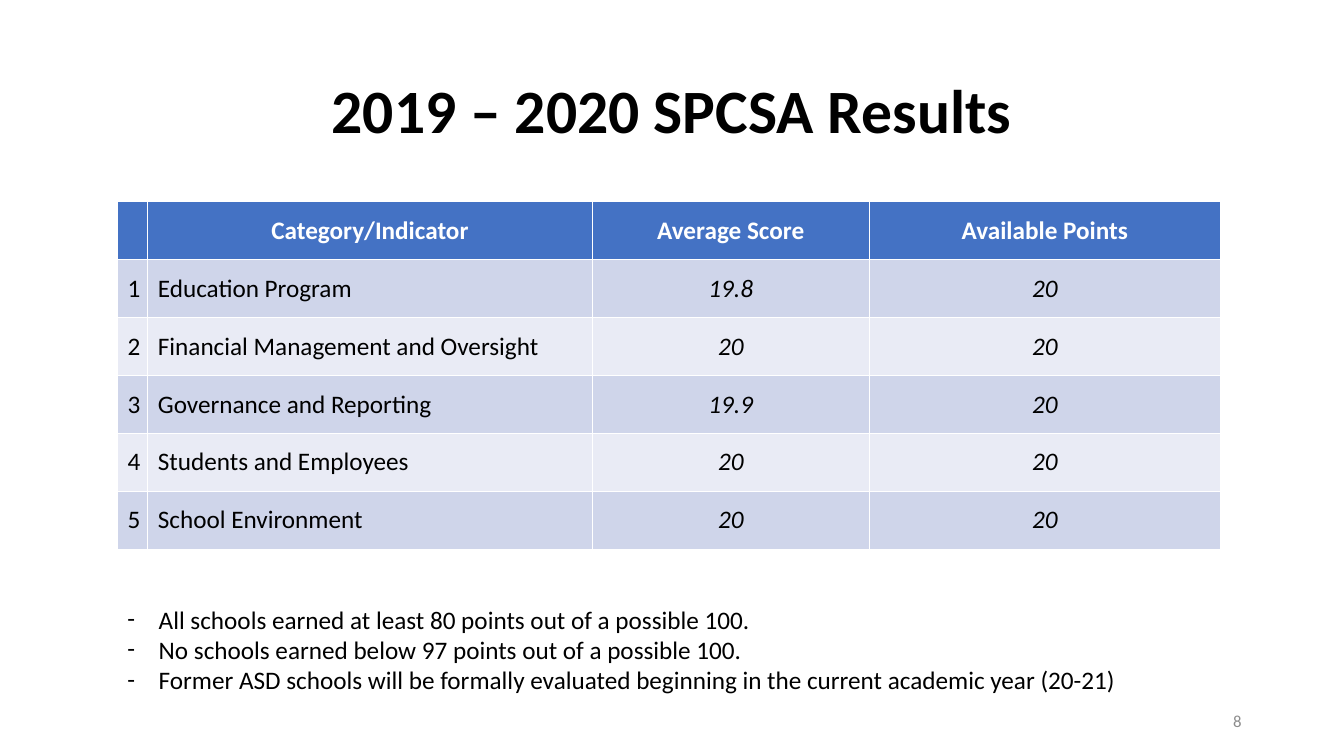
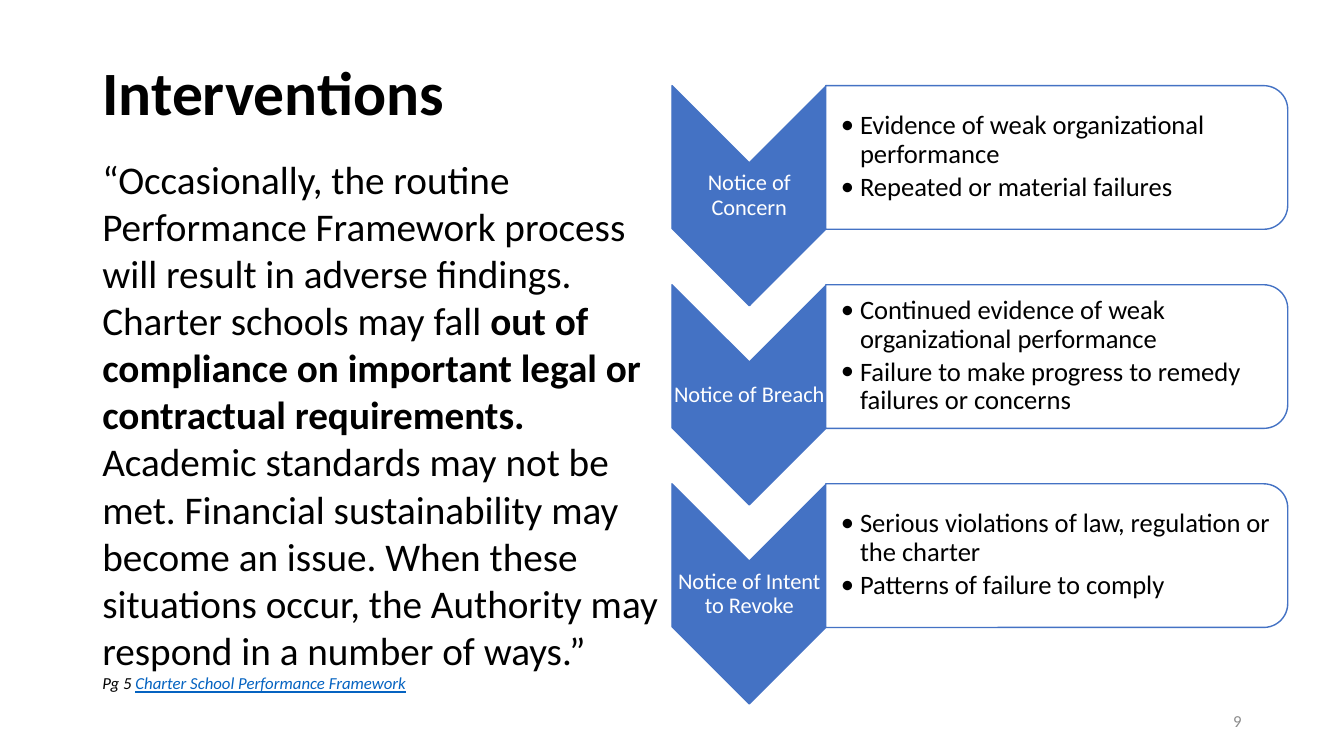
from lxml.etree import SubElement
from pptx import Presentation
from pptx.dml.color import RGBColor
from pptx.enum.shapes import MSO_SHAPE as Preset
from pptx.enum.text import MSO_ANCHOR as Anchor, PP_ALIGN as Align
from pptx.oxml.ns import qn
from pptx.util import Emu, Inches, Pt

BLACK = RGBColor(0x00, 0x00, 0x00)
WHITE = RGBColor(0xFF, 0xFF, 0xFF)
BLUE = RGBColor(0x44, 0x72, 0xC4)
BAND_DARK = RGBColor(0xCF, 0xD5, 0xEA)
BAND_LIGHT = RGBColor(0xE9, 0xEB, 0xF5)
GRAY = RGBColor(0x8C, 0x8C, 0x8C)
LINK_BLUE = RGBColor(0x05, 0x63, 0xC1)
FONT = "Calibri"
TITLE_ONLY = 5

presentation = Presentation()
presentation.slide_width = Emu(12192000)
presentation.slide_height = Inches(7.5)
COLUMN = presentation.slide_width / 160
ROW = presentation.slide_height / 90


def grid(left, top, width, height):
    """Turn columns and rows into slide lengths."""
    return (Emu(round(left * COLUMN)), Emu(round(top * ROW)),
            Emu(round(width * COLUMN)), Emu(round(height * ROW)))


def add_text(slide, area, lines, size, color=BLACK, align=Align.LEFT,
             anchor=Anchor.TOP, spacing=None, after=0, bullet=None, indent=0):
    """Add a wrapped text box, one paragraph per line, and return its frame."""
    frame = slide.shapes.add_textbox(*grid(*area)).text_frame
    frame.word_wrap = True
    frame.vertical_anchor = anchor
    for number, line in enumerate(lines):
        paragraph = frame.add_paragraph() if number else frame.paragraphs[0]
        paragraph.text = line
        if bullet:
            properties = paragraph._p.get_or_add_pPr()
            properties.set("marL", str(Inches(indent)))
            properties.set("indent", str(-Inches(indent)))
            SubElement(properties, qn("a:buFont"), typeface=FONT)
            SubElement(properties, qn("a:buChar"), char=bullet)
        paragraph.alignment = align
        paragraph.line_spacing = spacing
        paragraph.space_after = Pt(after)
        paragraph.font.name = FONT
        paragraph.font.size = Pt(size)
        paragraph.font.color.rgb = color
    return frame


# Titles and page numbers
slides = []
for page, title_text, title_rows, align in (
        (8, "2019 – 2020 SPCSA Results", 17.4, Align.CENTER),
        (9, "Interventions", 13.1, Align.LEFT)):
    slide = presentation.slides.add_slide(presentation.slide_layouts[TITLE_ONLY])
    title = slide.shapes.title
    title.left, title.top, title.width, title.height = grid(11, 4.8, 138, title_rows)
    title.text_frame.text = title_text
    title.text_frame.vertical_anchor = Anchor.MIDDLE
    paragraph = title.text_frame.paragraphs[0]
    paragraph.alignment = align
    paragraph.line_spacing = 0.9
    paragraph.font.name = FONT
    paragraph.font.size = Pt(44)
    paragraph.font.bold = True
    paragraph.font.color.rgb = BLACK
    add_text(slide, (113, 83.4, 36, 4.8), [str(page)], 12, GRAY,
             Align.RIGHT, Anchor.MIDDLE)
    slides.append(slide)
results_slide, interventions_slide = slides

# Results table
RESULTS = (
    ("", "Category/Indicator", "Average Score", "Available Points"),
    ("1", "Education Program", "19.8", "20"),
    ("2", "Financial Management and Oversight", "20", "20"),
    ("3", "Governance and Reporting", "19.9", "20"),
    ("4", "Students and Employees", "20", "20"),
    ("5", "School Environment", "20", "20"),
)
COLUMN_WIDTHS = (3.6, 52.9, 33, 41.8)
table = results_slide.shapes.add_table(
    len(RESULTS), len(COLUMN_WIDTHS),
    *grid(14, 24, sum(COLUMN_WIDTHS), 6.9 * len(RESULTS))).table
for table_column, width in zip(table.columns, COLUMN_WIDTHS):
    table_column.width = Emu(round(width * COLUMN))
for row_number, values in enumerate(RESULTS):
    is_header = row_number == 0
    band = BLUE if is_header else BAND_DARK if row_number % 2 else BAND_LIGHT
    for column_number, value in enumerate(values):
        cell = table.cell(row_number, column_number)
        cell.fill.solid()
        cell.fill.fore_color.rgb = band
        cell.vertical_anchor = Anchor.MIDDLE
        cell.text = value
        paragraph = cell.text_frame.paragraphs[0]
        is_name = column_number == 1 and not is_header
        paragraph.alignment = Align.LEFT if is_name else Align.CENTER
        paragraph.font.name = FONT
        paragraph.font.size = Pt(18)
        paragraph.font.bold = is_header
        paragraph.font.italic = column_number > 1 and not is_header
        paragraph.font.color.rgb = WHITE if is_header else BLACK

add_text(results_slide, (14, 71.3, 131.3, 15.7), (
    "All schools earned at least 80 points out of a possible 100.",
    "No schools earned below 97 points out of a possible 100.",
    "Former ASD schools will be formally evaluated beginning in the current "
    "academic year (20-21)",
), 18, bullet="-", indent=0.31)

# Quotation with its reference
quotation, reference = add_text(interventions_slide, (11, 17.9, 69, 65.9), (
    "“Occasionally, the routine Performance Framework process will result in "
    "adverse findings. Charter schools may fall ",
    "Pg 5 ",
), 28).paragraphs
emphasis = quotation.add_run()
emphasis.text = "out of compliance on important legal or contractual requirements. "
emphasis.font.bold = True
quotation.add_run().text = (
    "Academic standards may not be met. Financial sustainability may become an "
    "issue. When these situations occur, the Authority may respond in a number "
    "of ways.”")
reference.font.size = Pt(12)
reference.font.italic = True
document = reference.add_run()
document.text = "Charter School Performance Framework"
document.font.underline = True
document.font.color.rgb = LINK_BLUE

# Steps of intervention: a downward chevron and a panel each
STEPS = (
    ("Notice of Concern", ("Evidence of weak organizational performance",
                           "Repeated or material failures")),
    ("Notice of Breach", ("Continued evidence of weak organizational performance",
                          "Failure to make progress to remedy failures or concerns")),
    ("Notice of Intent to Revoke", (
        "Serious violations of law, regulation or the charter",
        "Patterns of failure to comply")),
)
CHEVRON_LEFT, CHEVRON_WIDTH, CHEVRON_HEIGHT = 80, 18.4, 26.2
PANEL_LEFT, PANEL_WIDTH, PANEL_HEIGHT = 98.3, 55, 17.1
for number, (notice, reasons) in enumerate(STEPS):
    top = 10.2 + 23.7 * number
    for preset, color, left, width, height in (
            (Preset.CHEVRON, BLUE, CHEVRON_LEFT, CHEVRON_WIDTH, CHEVRON_HEIGHT),
            (Preset.ROUND_2_SAME_RECTANGLE, WHITE, PANEL_LEFT, PANEL_WIDTH,
             PANEL_HEIGHT)):
        # A quarter turn swaps width and height about the centre
        shift = (width - height) / 2
        shape = interventions_slide.shapes.add_shape(
            preset, *grid(left + shift, top - shift, height, width))
        shape.rotation = 90
        shape.shadow.inherit = False
        shape.fill.solid()
        shape.fill.fore_color.rgb = color
        shape.line.color.rgb = BLUE
        shape.line.width = Pt(1)
    label = add_text(
        interventions_slide, (CHEVRON_LEFT, top + 9.2, CHEVRON_WIDTH, 7.8),
        [notice], 16, WHITE, Align.CENTER, Anchor.MIDDLE, spacing=0.9)
    panel_text = add_text(
        interventions_slide, (PANEL_LEFT, top + 0.8, 54.1, 15.4), reasons, 19,
        anchor=Anchor.MIDDLE, spacing=0.9, after=3, bullet="•", indent=0.19)
    for frame, left_margin in ((label, 0.01), (panel_text, 0.15)):
        frame.margin_left = Inches(left_margin)
        frame.margin_top = frame.margin_right = frame.margin_bottom = Inches(0.01)

presentation.save("out.pptx")
